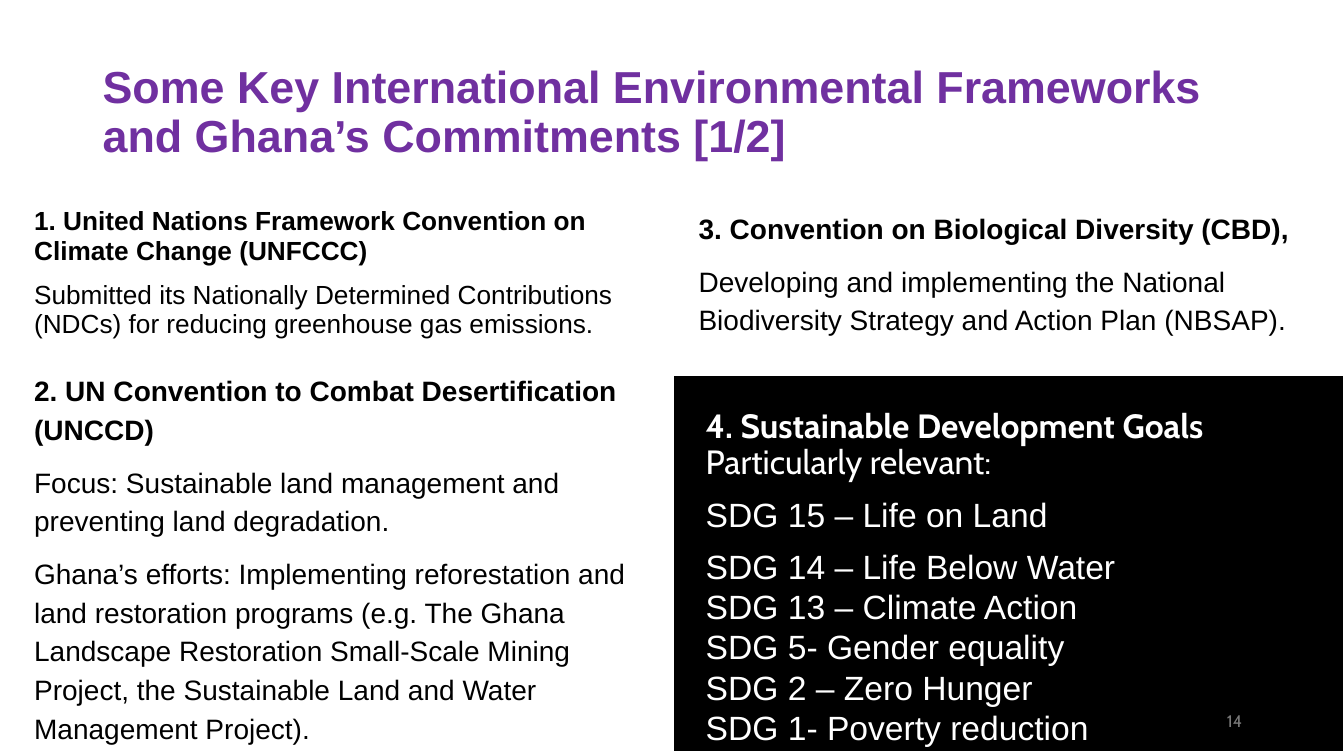
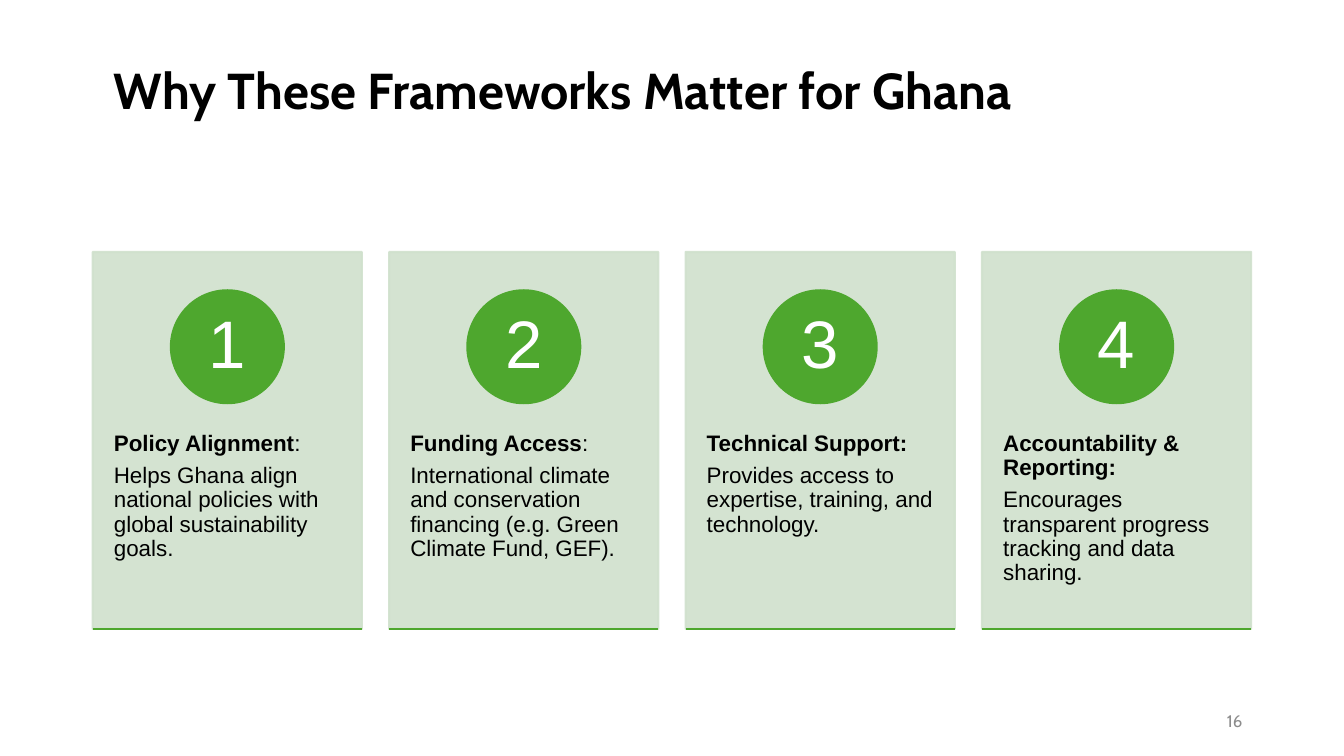
from lxml.etree import SubElement
from pptx import Presentation
from pptx.dml.color import RGBColor
from pptx.enum.shapes import MSO_CONNECTOR, MSO_SHAPE
from pptx.enum.text import MSO_ANCHOR, PP_ALIGN
from pptx.oxml.ns import qn
from pptx.util import Inches, Pt

BLACK, WHITE, PURPLE = "000000", "FFFFFF", "7030A0"
GREEN, PALE_GREEN = "4EA72E", "D0E1CD"
SANS, DISPLAY = "Arial", "Cabin"
BODY_INSETS = (0.1, 0.05)


def color(value):
    return RGBColor.from_string(value)


class Deck:
    """Holds the shared style and the slide being built."""

    def __init__(self):
        self.presentation = Presentation()
        self.presentation.slide_width = Inches(13.33)
        self.presentation.slide_height = Inches(7.5)
        self.slide = None

    def new_slide(self):
        self.slide = self.presentation.slides.add_slide(self.presentation.slide_layouts[6])

    def fill_text(self, shape, paragraphs, size, font=SANS, ink=BLACK, spacing=1.0, before=0,
                  after=0, align=PP_ALIGN.LEFT, anchor=MSO_ANCHOR.TOP, insets=BODY_INSETS):
        """Fill a shape with paragraphs, each a pair of bold and regular text."""
        frame = shape.text_frame
        frame.word_wrap = True
        frame.vertical_anchor = anchor
        frame.margin_left = frame.margin_right = Inches(insets[0])
        frame.margin_top = frame.margin_bottom = Inches(insets[1])
        for index, (bold_text, regular_text) in enumerate(paragraphs):
            paragraph = frame.add_paragraph() if index else frame.paragraphs[0]
            paragraph.alignment = align
            paragraph.line_spacing = spacing
            paragraph.space_before, paragraph.space_after = Pt(before), Pt(after)
            paragraph.font.size, paragraph.font.name = Pt(size), font
            paragraph.font.color.rgb = color(ink)
            for text, bold in ((bold_text, True), (regular_text, False)):
                if text:
                    run = paragraph.add_run()
                    run.text = text
                    run.font.bold = bold
        return frame

    def text(self, left, top, width, height, paragraphs, size, **style):
        shape = self.slide.shapes.add_textbox(
            Inches(left), Inches(top), Inches(width), Inches(height))
        return self.fill_text(shape, paragraphs, size, **style)

    def title(self, left, top, height, text, size, font, ink):
        self.text(left, top, 11.5, height, [(text, "")], size, font=font, ink=ink,
                  spacing=0.9, anchor=MSO_ANCHOR.MIDDLE)

    def page_number(self, number, ink):
        self.text(9.42, 6.95, 3, 0.4, [("", str(number))], 12, font=DISPLAY, ink=ink,
                  align=PP_ALIGN.RIGHT, anchor=MSO_ANCHOR.MIDDLE)

    def shape(self, kind, left, top, width, height, fill, outline, opacity=100):
        shape = self.slide.shapes.add_shape(
            kind, Inches(left), Inches(top), Inches(width), Inches(height))
        shape.shadow.inherit = False
        shape.fill.solid()
        shape.fill.fore_color.rgb = color(fill)
        shape.line.color.rgb = color(outline)
        shape.line.width = Pt(1.5)
        if opacity < 100:
            for node in list(shape.element.spPr.iter(qn("a:srgbClr"))):
                SubElement(node, qn("a:alpha")).set("val", str(opacity * 1000))
        return shape

    def rule(self, left, top, width, ink):
        line = self.slide.shapes.add_connector(
            MSO_CONNECTOR.STRAIGHT, Inches(left), Inches(top), Inches(left + width), Inches(top))
        line.line.color.rgb = color(ink)
        line.line.width = Pt(1.5)
        SubElement(line.element.spPr, qn("a:effectLst"))

    def card(self, left, number, heading, body):
        top, width, height, circle = 2.5, 2.67, 3.74, 1.12
        self.shape(MSO_SHAPE.RECTANGLE, left, top, width, height, PALE_GREEN, PALE_GREEN, 90)
        self.text(left, 3.93, width, 2.25, [heading, ("", body)], 16, spacing=0.9, after=5.6,
                  insets=(0.21, 0.36))
        badge = self.shape(MSO_SHAPE.OVAL, left + (width - circle) / 2, top + 0.38,
                           circle, circle, GREEN, GREEN)
        self.fill_text(badge, [("", str(number))], 48, ink=WHITE, spacing=0.9,
                       align=PP_ALIGN.CENTER, anchor=MSO_ANCHOR.MIDDLE, insets=(0.09, 0.01))
        self.rule(left, top + height, width, GREEN)


def build_frameworks(deck):
    deck.new_slide()
    deck.title(0.92, 0.4, 1.45,
               "Some Key International Environmental Frameworks and Ghana’s Commitments [1/2]",
               32, SANS, PURPLE)

    # Left column
    deck.text(0.24, 2, 6.26, 1.5, [
        ("1. United Nations Framework Convention on Climate Change (UNFCCC)", ""),
        ("", "Submitted its Nationally Determined Contributions (NDCs) for reducing "
             "greenhouse gas emissions."),
    ], 18.7, spacing=0.95, before=10)
    deck.text(0.24, 3.61, 6.26, 3.53, [
        ("2. UN Convention to Combat Desertification (UNCCD)", ""),
        ("", "Focus: Sustainable land management and preventing land degradation."),
        ("", "Ghana’s efforts: Implementing reforestation and land restoration programs "
             "(e.g. The Ghana Landscape Restoration Small-Scale Mining Project, "
             "the Sustainable Land and Water Management Project)."),
    ], 20, spacing=1.15, before=10)

    # Right column
    deck.text(6.83, 2, 6.5, 1.55, [
        ("3. Convention on Biological Diversity (CBD),", ""),
        ("", "Developing and implementing the National Biodiversity Strategy and "
             "Action Plan (NBSAP)."),
    ], 20, spacing=1.15, before=10)

    # Goals panel
    panel = deck.shape(MSO_SHAPE.RECTANGLE, 6.67, 3.72, 6.66, 3.74, BLACK, WHITE)
    goals = ["SDG 15 – Life on Land", "SDG 14 – Life Below Water", "SDG 13 – Climate Action",
             "SDG 5- Gender equality", "SDG 2 – Zero Hunger", "SDG 1- Poverty reduction"]
    frame = deck.fill_text(
        panel,
        [("4. Sustainable Development Goals ", "Particularly relevant:")]
        + [("", goal) for goal in goals],
        24, ink=WHITE, insets=(0.33, 0.34))
    heading, first_goal = frame.paragraphs[:2]
    heading.font.name = DISPLAY
    heading.line_spacing = 0.9
    heading.space_after = first_goal.space_after = Pt(8.4)

    deck.page_number(14, "797979")


def build_reasons(deck):
    deck.new_slide()
    deck.title(1.03, 0.61, 0.62, "Why These Frameworks Matter for Ghana", 36, DISPLAY, BLACK)
    deck.page_number(16, "8C8C8C")

    # Numbered cards
    reasons = [
        (("Policy Alignment", ":"),
         "Helps Ghana align national policies with global sustainability goals."),
        (("Funding Access", ":"),
         "International climate and conservation financing (e.g. Green Climate Fund, GEF)."),
        (("Technical Support:", ""),
         "Provides access to expertise, training, and technology."),
        (("Accountability & Reporting:", ""),
         "Encourages transparent progress tracking and data sharing."),
    ]
    for index, (heading, body) in enumerate(reasons):
        deck.card(0.92 + 2.94 * index, index + 1, heading, body)


def main():
    deck = Deck()
    build_frameworks(deck)
    build_reasons(deck)
    deck.presentation.save("out.pptx")


if __name__ == "__main__":
    main()
